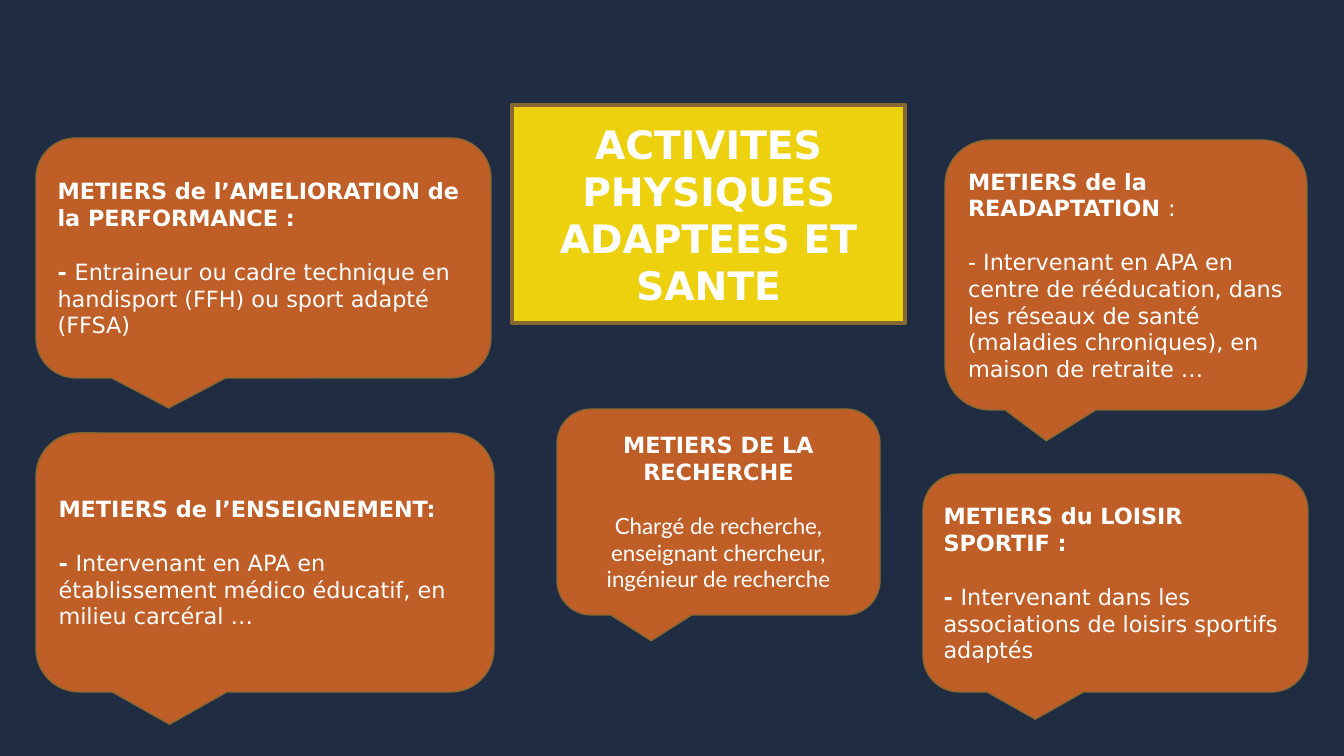
from pptx import Presentation
from pptx.dml.color import RGBColor
from pptx.enum.shapes import MSO_SHAPE as Shape
from pptx.enum.text import MSO_ANCHOR as Anchor, PP_ALIGN as Align
from pptx.util import Pt

# Content
WIDTH, HEIGHT = 1344, 756
NAVY, YELLOW, ORANGE, BROWN, WHITE = "202C41", "EDD10E", "C05E27", "876832", "FFFFFF"
FONT, RESEARCH_FONT = "DejaVu Sans", "Lato"
TITLE = "ACTIVITES PHYSIQUES ADAPTEES ET SANTE"
TITLE_BOX = (512, 105, 393, 218)
POINTER = (-0.2083, 0.625, 0.1667)

# Each callout: box, pointer, alignment, body font, heading runs, body runs (text, bold)
CALLOUTS = [
    ((36, 138, 455, 240), POINTER, Align.LEFT, FONT,
     [("METIERS de l’AMELIORATION de la PERFORMANCE :", True)],
     [("- ", True),
      ("Entraineur ou cadre technique en handisport (FFH) ou sport adapté (FFSA)", False)]),
    ((36, 433, 458, 259), POINTER, Align.LEFT, FONT,
     [("METIERS de l’ENSEIGNEMENT:", True)],
     [("- ", True),
      ("Intervenant en APA en établissement médico éducatif, en milieu carcéral …", False)]),
    ((945, 140, 362, 270), (-0.22, 0.614, 0.1667), Align.LEFT, FONT,
     [("METIERS de la READAPTATION ", True), (":", False)],
     [("- Intervenant en APA en centre de rééducation, dans les réseaux de santé "
       "(maladies chroniques), en maison de retraite …", False)]),
    ((923, 474, 385, 218), POINTER, Align.LEFT, FONT,
     [("METIERS du LOISIR SPORTIF :", True)],
     [("- ", True),
      ("Intervenant dans les associations de loisirs sportifs adaptés", False)]),
    ((557, 409, 323, 206), POINTER, Align.CENTER, RESEARCH_FONT,
     [("METIERS DE LA RECHERCHE", True)],
     [("Chargé de recherche, enseignant chercheur, ingénieur de recherche", False)]),
]


def px(value):
    return round(value * 914400 / 100.8)


def color(value):
    return RGBColor.from_string(value)


def add_box(slide, kind, box, fill, line_width):
    shape = slide.shapes.add_shape(kind, *map(px, box))
    shape.shadow.inherit = False
    shape.fill.solid()
    shape.fill.fore_color.rgb = color(fill)
    shape.line.color.rgb = color(BROWN)
    shape.line.width = Pt(line_width)
    shape.text_frame.word_wrap = True
    shape.text_frame.vertical_anchor = Anchor.MIDDLE
    return shape


def write(paragraph, runs, size, align, font=FONT):
    paragraph.alignment = align
    paragraph.font.name = font
    paragraph.font.size = Pt(size)
    paragraph.font.color.rgb = color(WHITE)
    for text, bold in runs:
        run = paragraph.add_run()
        run.text = text
        run.font.bold = bold


def main():
    presentation = Presentation()
    presentation.slide_width, presentation.slide_height = px(WIDTH), px(HEIGHT)
    slide = presentation.slides.add_slide(presentation.slide_layouts[6])
    slide.background.fill.solid()
    slide.background.fill.fore_color.rgb = color(NAVY)

    # Title
    title = add_box(slide, Shape.RECTANGLE, TITLE_BOX, YELLOW, 3)
    write(title.text_frame.paragraphs[0], [(TITLE, True)], 28, Align.CENTER)

    # Callouts
    for box, pointer, align, body_font, heading, body in CALLOUTS:
        callout = add_box(slide, Shape.ROUNDED_RECTANGULAR_CALLOUT, box, ORANGE, 1)
        for index, value in enumerate(pointer):
            callout.adjustments[index] = value
        frame = callout.text_frame
        write(frame.paragraphs[0], heading, 16, align)
        paragraph = frame.add_paragraph()
        paragraph.space_before = Pt(19)
        write(paragraph, body, 16, align, body_font)

    presentation.save("out.pptx")


if __name__ == "__main__":
    main()
